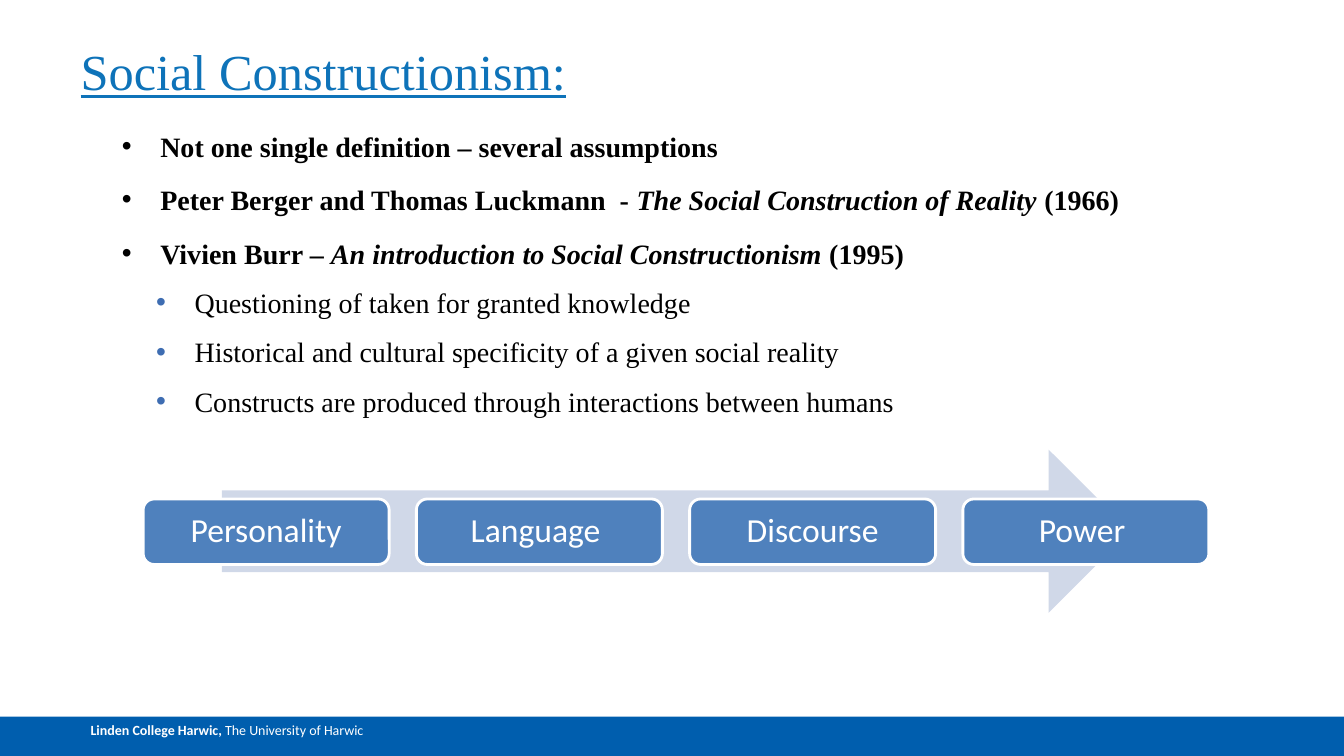
from lxml import etree
from pptx import Presentation
from pptx.dml.color import RGBColor
from pptx.enum.shapes import MSO_SHAPE
from pptx.enum.text import MSO_ANCHOR, PP_ALIGN
from pptx.oxml.ns import qn
from pptx.util import Inches, Pt

RECTANGLE = MSO_SHAPE.RECTANGLE
ROUNDED = MSO_SHAPE.ROUNDED_RECTANGLE
RIGHT_ARROW = MSO_SHAPE.RIGHT_ARROW
TOP, MIDDLE, BOTTOM = MSO_ANCHOR.TOP, MSO_ANCHOR.MIDDLE, MSO_ANCHOR.BOTTOM
LEFT, CENTER = PP_ALIGN.LEFT, PP_ALIGN.CENTER

WHITE = RGBColor(0xFF, 0xFF, 0xFF)
BLACK = RGBColor(0x00, 0x00, 0x00)
FOOTER_BLUE = RGBColor(0x00, 0x5E, 0xAE)
TITLE_BLUE = RGBColor(0x0E, 0x73, 0xB9)
BULLET_BLUE = RGBColor(0x3E, 0x6D, 0xB2)
ARROW_GREY = RGBColor(0xD0, 0xD8, 0xE8)
STEP_BLUE = RGBColor(0x4F, 0x81, 0xBD)

SERIF = "Times New Roman"
SANS = "Calibri"

ASSUMPTIONS = [
    [("Not one single definition – several assumptions", False)],
    [("Peter Berger and Thomas Luckmann  - ", False),
     ("The Social Construction of Reality ", True), ("(1966)", False)],
    [("Vivien Burr – ", False),
     ("An introduction to Social Constructionism ", True), ("(1995)", False)],
]
DETAILS = [
    "Questioning of taken for granted knowledge",
    "Historical and cultural specificity of a given social reality",
    "Constructs are produced through interactions between humans",
]
STEPS = ["Personality", "Language ", "Discourse", "Power "]
STEP_LEFT, STEP_WIDTH, STEP_GAP = 1.42, 2.44, 0.27


def add_span(para, text, *, size, font, color, bold=False, italic=False, underline=False):
    span = para.add_run()
    span.text = text
    span.font.size = Pt(size)
    span.font.name = font
    span.font.color.rgb = color
    span.font.bold = bold
    span.font.italic = italic
    span.font.underline = underline


def set_frame(shape, anchor, inset_x=0.1, inset_y=0.05):
    frame = shape.text_frame
    frame.word_wrap = True
    frame.vertical_anchor = anchor
    frame.margin_left = frame.margin_right = Inches(inset_x)
    frame.margin_top = frame.margin_bottom = Inches(inset_y)
    return frame


def add_text_box(page, left, top, width, height, anchor):
    box = page.shapes.add_textbox(Inches(left), Inches(top), Inches(width), Inches(height))
    return set_frame(box, anchor, 0, 0)


def add_filled_shape(page, kind, left, top, width, height, fill, line=None):
    shape = page.shapes.add_shape(
        kind, Inches(left), Inches(top), Inches(width), Inches(height))
    shape.shadow.inherit = False
    shape.fill.solid()
    shape.fill.fore_color.rgb = fill
    if line is None:
        shape.line.fill.background()
    else:
        shape.line.color.rgb = line
        shape.line.width = Pt(2)
    return shape


def set_indent(para, margin, first_line=0):
    properties = para._p.get_or_add_pPr()
    properties.set("marL", str(Inches(margin)))
    properties.set("indent", str(Inches(first_line)))
    return properties


def add_bullet(frame, number, spans, *, margin, before, bullet_color, bold):
    para = frame.paragraphs[0] if number == 0 else frame.add_paragraph()
    para.space_before = Pt(before)
    properties = set_indent(para, margin, -0.38)
    color = etree.SubElement(properties, qn("a:buClr"))
    etree.SubElement(color, qn("a:srgbClr")).set("val", str(bullet_color))
    etree.SubElement(properties, qn("a:buFont")).set("typeface", "Arial")
    etree.SubElement(properties, qn("a:buChar")).set("char", "•")
    for text, italic in spans:
        add_span(para, text, size=20, font=SERIF, color=BLACK, bold=bold, italic=italic)


def add_footer(page):
    bar = add_filled_shape(page, RECTANGLE, 0, 7.11, 13.33, 0.39, FOOTER_BLUE)
    para = set_frame(bar, TOP).paragraphs[0]
    para.alignment = LEFT
    set_indent(para, 0.8)
    add_span(para, "Linden College Harwic, ", size=10, font=SANS, color=WHITE, bold=True)
    add_span(para, "The University of Harwic", size=10, font=SANS, color=WHITE)


def add_title(page):
    frame = add_text_box(page, 0.8, 0.39, 10.94, 0.61, BOTTOM)
    add_span(frame.paragraphs[0], "Social Constructionism:",
             size=36, font=SERIF, color=TITLE_BLUE, underline=True)


def add_body(page):
    frame = add_text_box(page, 1.21, 1.28, 10.94, 3.35, TOP)
    for number, spans in enumerate(ASSUMPTIONS):
        add_bullet(frame, number, spans, margin=0.38, before=14.2,
                   bullet_color=BLACK, bold=True)
    for number, text in enumerate(DETAILS, len(ASSUMPTIONS)):
        add_bullet(frame, number, [(text, False)], margin=0.72, before=11.3,
                   bullet_color=BULLET_BLUE, bold=False)


def add_process(page):
    add_filled_shape(page, RIGHT_ARROW, 2.2, 4.46, 9.01, 1.62, ARROW_GREY)
    for number, label in enumerate(STEPS):
        left = STEP_LEFT + number * (STEP_WIDTH + STEP_GAP)
        step = add_filled_shape(page, ROUNDED, left, 4.95, STEP_WIDTH, 0.65, STEP_BLUE, WHITE)
        para = set_frame(step, MIDDLE, 0.1, 0.1).paragraphs[0]
        para.alignment = CENTER
        para.line_spacing = 0.9
        add_span(para, label, size=24, font=SANS, color=WHITE)


def main():
    deck = Presentation()
    deck.slide_width = Inches(13.33)
    deck.slide_height = Inches(7.5)
    page = deck.slides.add_slide(deck.slide_layouts[6])
    add_footer(page)
    add_title(page)
    add_body(page)
    add_process(page)
    deck.save("out.pptx")


if __name__ == "__main__":
    main()
